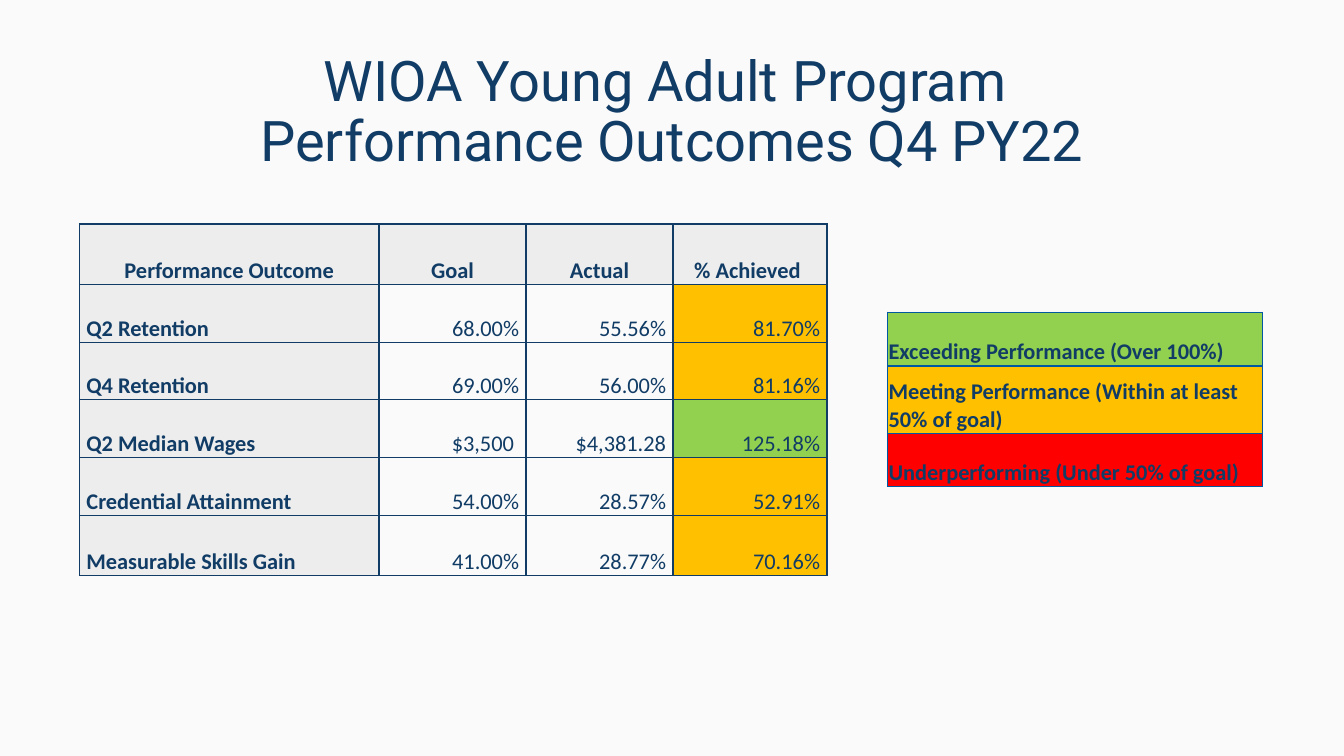
from lxml import etree
from pptx import Presentation
from pptx.dml.color import RGBColor
from pptx.enum.text import MSO_ANCHOR, PP_ALIGN
from pptx.oxml.ns import qn
from pptx.util import Pt

LEFT, CENTER, RIGHT = PP_ALIGN.LEFT, PP_ALIGN.CENTER, PP_ALIGN.RIGHT
MIDDLE, BOTTOM = MSO_ANCHOR.MIDDLE, MSO_ANCHOR.BOTTOM

TITLE_LINES = ["WIOA Young Adult Program ", "Performance Outcomes Q4 PY22"]
HEADERS = ["Performance Outcome", "Goal", "Actual", "% Achieved "]
OUTCOMES = [
    ("Q2 Retention", "68.00%", "55.56%", "81.70%"),
    ("Q4 Retention", "69.00%", "56.00%", "81.16%"),
    ("Q2 Median Wages", "$3,500 ", "$4,381.28", "125.18%"),
    ("Credential Attainment", "54.00%", "28.57%", "52.91%"),
    ("Measurable Skills Gain", "41.00%", "28.77%", "70.16%"),
]
LEGEND = [
    ("Exceeding Performance (Over 100%)", "exceeding"),
    ("Meeting Performance (Within at least 50% of goal)", "meeting"),
    ("Underperforming (Under 50% of goal)", "under"),
]
COLORS = {
    "background": "FAFAFA", "navy": "113C66", "legend_border": "0058A3",
    "label": "EDEDED", "exceeding": "92D050", "meeting": "FFC000", "under": "FF0000",
}
OUTCOME_COLUMNS = [214, 105, 105, 110]
OUTCOME_ROWS = [43.2] + [41.2] * 4 + [43.2]
LEGEND_COLUMNS = [268]
LEGEND_ROWS = [38.4, 48, 38.4]


def color(name):
    return RGBColor.from_string(COLORS[name])


def add_run(paragraph, text, font_name, size, bold=False):
    run = paragraph.add_run()
    run.text = text
    run.font.name = font_name
    run.font.size = Pt(size)
    run.font.bold = bold
    run.font.color.rgb = color("navy")


def add_title(slide):
    box = slide.shapes.add_textbox(Pt(66), Pt(28.75), Pt(828), Pt(104.4))
    box.text_frame.word_wrap = True
    box.text_frame.vertical_anchor = MIDDLE
    paragraph = box.text_frame.paragraphs[0]
    paragraph.alignment = CENTER
    paragraph.line_spacing = 0.9
    for index, line in enumerate(TITLE_LINES):
        if index:
            paragraph.add_line_break()
        add_run(paragraph, line, "Roboto", 40)


def add_grid(slide, left, top, columns, rows):
    """Add an empty table with the given column widths and row heights."""
    frame = slide.shapes.add_table(len(rows), len(columns), Pt(left), Pt(top),
                                   Pt(sum(columns)), Pt(sum(rows)))
    table = frame.table
    table.first_row = table.horz_banding = False
    for column, width in zip(table.columns, columns):
        column.width = Pt(width)
    for row, height in zip(table.rows, rows):
        row.height = Pt(height)
    return table


def add_borders(cell, name):
    properties = cell._tc.get_or_add_tcPr()
    for index, side in enumerate(("lnL", "lnR", "lnT", "lnB")):
        line = etree.Element(qn(f"a:{side}"), w=str(Pt(1)))
        fill = etree.SubElement(line, qn("a:solidFill"))
        etree.SubElement(fill, qn("a:srgbClr"), val=COLORS[name])
        properties.insert(index, line)


def fill_cell(cell, text, fill, border, side_margin, alignment=LEFT, bold=True):
    cell.fill.solid()
    cell.fill.fore_color.rgb = color(fill)
    cell.vertical_anchor = BOTTOM
    cell.margin_left = cell.margin_right = Pt(side_margin)
    cell.margin_top = cell.margin_bottom = Pt(0)
    paragraph = cell.text_frame.paragraphs[0]
    paragraph.alignment = alignment
    add_run(paragraph, text, "Calibri", 16, bold)
    add_borders(cell, border)


def rating(achieved):
    percent = float(achieved.rstrip("%"))
    if percent > 100:
        return "exceeding"
    return "meeting" if percent >= 50 else "under"


def add_outcomes(slide):
    table = add_grid(slide, 56.75, 160, OUTCOME_COLUMNS, OUTCOME_ROWS)
    for column, header in enumerate(HEADERS):
        fill_cell(table.cell(0, column), header, "label", "navy", 5, CENTER)
    for row, outcome in enumerate(OUTCOMES, start=1):
        fills = ["label", "background", "background", rating(outcome[-1])]
        for column, (text, fill) in enumerate(zip(outcome, fills)):
            is_label = column == 0
            fill_cell(table.cell(row, column), text, fill, "navy", 5,
                      LEFT if is_label else RIGHT, is_label)


def add_legend(slide):
    table = add_grid(slide, 634, 223, LEGEND_COLUMNS, LEGEND_ROWS)
    for row, (text, fill) in enumerate(LEGEND):
        fill_cell(table.cell(row, 0), text, fill, "legend_border", 0.75)


def main():
    presentation = Presentation()
    presentation.slide_width, presentation.slide_height = Pt(960), Pt(540)
    slide = presentation.slides.add_slide(presentation.slide_layouts[6])
    slide.background.fill.solid()
    slide.background.fill.fore_color.rgb = color("background")
    add_title(slide)
    add_outcomes(slide)
    add_legend(slide)
    presentation.save("out.pptx")


if __name__ == "__main__":
    main()
